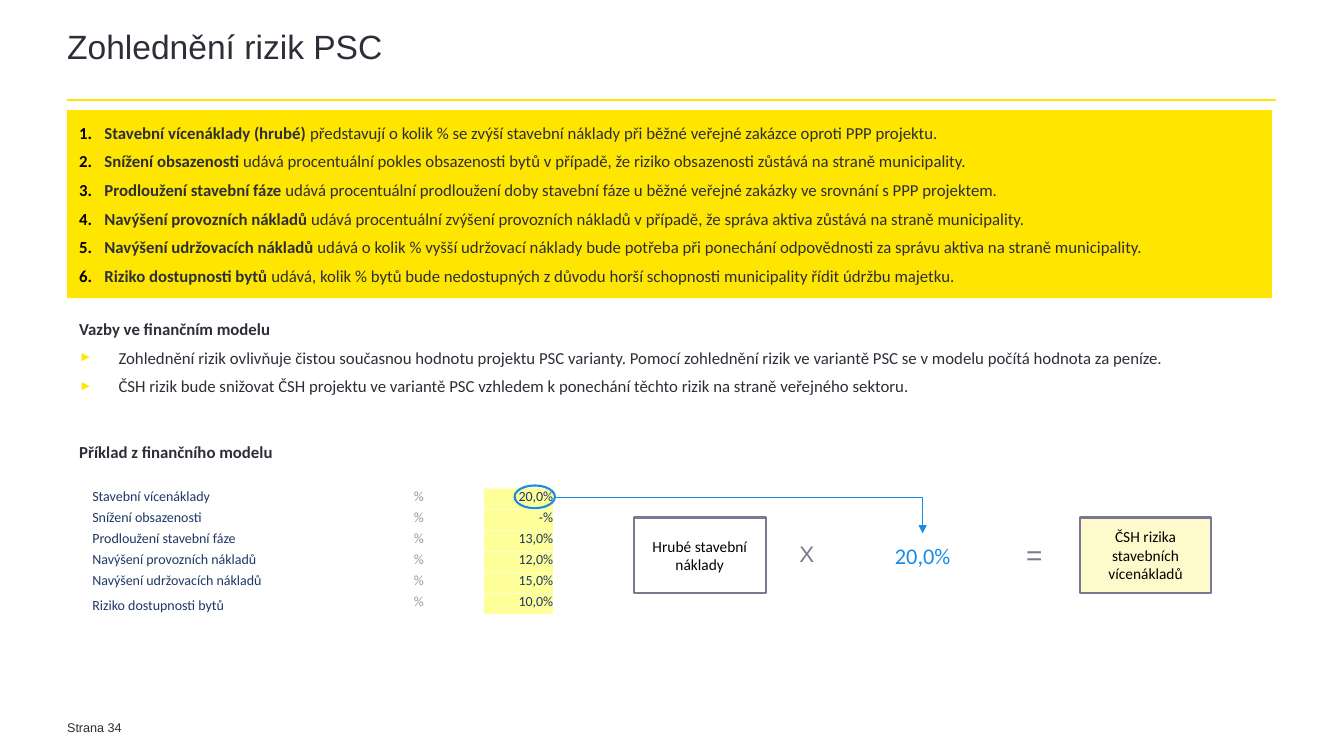
"""Builds the slide on how PSC risks are taken into account."""
from dataclasses import dataclass

from lxml.etree import SubElement
from pptx import Presentation
from pptx.dml.color import RGBColor
from pptx.enum.dml import MSO_LINE
from pptx.enum.shapes import MSO_CONNECTOR, MSO_SHAPE
from pptx.enum.text import MSO_ANCHOR, PP_ALIGN
from pptx.oxml import parse_xml
from pptx.oxml.ns import nsdecls, qn
from pptx.util import Inches, Pt


@dataclass(frozen=True)
class Theme:
    heading_font: str = "Arial"
    body_font: str = "Calibri"
    ink: str = "2E2E38"
    black: str = "000000"
    white: str = "FFFFFF"
    yellow: str = "FFE600"
    cream: str = "FFFACC"
    input_fill: str = "FFFF99"
    gray: str = "797991"
    unit: str = "999999"
    label: str = "1F3864"
    value: str = "203764"
    blue: str = "188CE5"
    title_size: int = 24
    equals_size: int = 20
    formula_size: int = 16
    body_size: int = 12
    box_size: int = 11
    table_size: int = 10
    footer_size: int = 9
    thin: float = 0.75
    thick: float = 1.5


class SlideBuilder:
    """Draws on one slide with a grid of 12 columns and 12 rows to the inch."""

    def __init__(self, deck, theme):
        self.theme = theme
        self.slide = deck.slides.add_slide(deck.slide_layouts[6])

    def place(self, *cells):
        return [Inches(cell / 12) for cell in cells]

    def style(self, para, size, color, font=None, bold=False):
        for span in para.runs:
            span.font.name = font or self.theme.body_font
            span.font.size = Pt(size)
            span.font.bold = bold
            span.font.color.rgb = RGBColor.from_string(color)

    def frame(self, frame, margins, anchor=MSO_ANCHOR.TOP):
        frame.word_wrap = True
        frame.vertical_anchor = anchor
        frame.margin_left, frame.margin_top, frame.margin_right, frame.margin_bottom = self.place(*margins)
        return frame

    def text(self, area, text, size, color, font=None, margins=(0, 0.5, 0, 0),
             align=PP_ALIGN.LEFT, anchor=MSO_ANCHOR.TOP, spacing=None):
        box = self.slide.shapes.add_textbox(*self.place(*area))
        frame = self.frame(box.text_frame, margins, anchor)
        frame.text = text
        para = frame.paragraphs[0]
        para.alignment = align
        para.line_spacing = spacing
        self.style(para, size, color, font)

    def bullet(self, para, indent, color, kind, scale=100, **mark):
        properties = para._p.get_or_add_pPr()
        hanging = Inches(indent)
        properties.set("marL", str(hanging))
        properties.set("indent", str(-hanging))
        SubElement(SubElement(properties, qn("a:buClr")), qn("a:srgbClr"), val=color)
        SubElement(properties, qn("a:buSzPct"), val=str(scale * 1000))
        SubElement(properties, qn("a:buFont"), typeface=self.theme.heading_font if kind == "a:buChar" else self.theme.body_font)
        SubElement(properties, qn(kind), **mark)

    def passage(self, area, entries, fill=None, numbered=False):
        theme = self.theme
        box = self.shape(MSO_SHAPE.RECTANGLE, area, fill)
        anchor = MSO_ANCHOR.MIDDLE if numbered else MSO_ANCHOR.TOP
        frame = self.frame(box.text_frame, (1.44,) * 4, anchor)
        for index, (lead, rest) in enumerate(entries):
            para = frame.paragraphs[0] if index == 0 else frame.add_paragraph()
            para.alignment = PP_ALIGN.JUSTIFY if lead else PP_ALIGN.LEFT
            para.space_after = Pt(6)
            if numbered:
                self.bullet(para, 0.25, theme.black, "a:buAutoNum", type="arabicPeriod")
            elif rest:
                self.bullet(para, 0.39, theme.yellow, "a:buChar", 80, char="►")
            for text in filter(None, (lead, rest)):
                para.add_run().text = text
            self.style(para, theme.body_size, theme.ink)
            if lead:
                para.runs[0].font.bold = True

    def shape(self, kind, area, fill=None, line=None):
        shape = self.slide.shapes.add_shape(kind, *self.place(*area))
        shape.shadow.inherit = False
        if fill:
            shape.fill.solid()
            shape.fill.fore_color.rgb = RGBColor.from_string(fill)
        else:
            shape.fill.background()
        if line:
            shape.line.color.rgb = RGBColor.from_string(line)
            shape.line.width = Pt(self.theme.thick)
        else:
            shape.line.fill.background()
        return shape

    def labelled_box(self, area, text, fill=None):
        box = self.shape(MSO_SHAPE.RECTANGLE, area, fill, self.theme.gray)
        frame = self.frame(box.text_frame, (0.5,) * 4, MSO_ANCHOR.MIDDLE)
        frame.text = text
        frame.paragraphs[0].alignment = PP_ALIGN.CENTER
        self.style(frame.paragraphs[0], self.theme.box_size, self.theme.black)

    def connector(self, ends, color, width, arrow=False):
        kind = MSO_CONNECTOR.ELBOW if arrow else MSO_CONNECTOR.STRAIGHT
        line = self.slide.shapes.add_connector(kind, *self.place(*ends))
        line.line.color.rgb = RGBColor.from_string(color)
        line.line.width = Pt(width)
        properties = line._element.spPr
        if arrow:
            properties.find(qn("a:prstGeom")).set("prst", "bentConnector2")
            SubElement(properties.find(qn("a:ln")), qn("a:tailEnd"), type="triangle")
        SubElement(properties, qn("a:effectLst"))

    def border(self, cell, sides):
        properties = cell._tc.get_or_add_tcPr()
        for index, side in enumerate(sides):
            properties.insert(index, parse_xml(
                f'<a:ln{side} {nsdecls("a")} w="{Pt(0.5)}"><a:solidFill><a:srgbClr val="{self.theme.white}"/>'
                f'</a:solidFill><a:prstDash val="{MSO_LINE.ROUND_DOT.name and "sysDot"}"/></a:ln{side}>'))

    def table(self, corner, widths, height, rows):
        theme = self.theme
        area = (*corner, sum(widths), height * len(rows))
        table = self.slide.shapes.add_table(len(rows), len(widths), *self.place(*area)).table
        table.first_row = table.horz_banding = False
        for column, width in zip(table.columns, self.place(*widths)):
            column.width = width
        for row, texts in zip(table.rows, rows):
            row.height = self.place(height)[0]
            for cell, text, color in zip(row.cells, texts, (theme.label, theme.unit, theme.value)):
                cell.margin_left = cell.margin_right = cell.margin_top = cell.margin_bottom = 0
                cell.text_frame.text = text
                self.style(cell.text_frame.paragraphs[0], theme.table_size, color)
                cell.fill.background()
            unit, value = row.cells[1], row.cells[2]
            value.fill.solid()
            value.fill.fore_color.rgb = RGBColor.from_string(theme.input_fill)
            value.text_frame.paragraphs[0].alignment = PP_ALIGN.RIGHT
            self.border(unit, "R")
            self.border(value, "LRTB")
        table.cell(len(rows) - 1, 0).vertical_anchor = MSO_ANCHOR.BOTTOM


RISKS = [
    ("Stavební vícenáklady (hrubé) ", "představují o kolik % se zvýší stavební náklady při běžné veřejné zakázce oproti PPP projektu."),
    ("Snížení obsazenosti ", "udává procentuální pokles obsazenosti bytů v případě, že riziko obsazenosti zůstává na straně municipality."),
    ("Prodloužení stavební fáze ", "udává procentuální prodloužení doby stavební fáze u běžné veřejné zakázky ve srovnání s PPP projektem."),
    ("Navýšení provozních nákladů ", "udává procentuální zvýšení provozních nákladů v případě, že správa aktiva zůstává na straně municipality."),
    ("Navýšení udržovacích nákladů ", "udává o kolik % vyšší udržovací náklady bude potřeba při ponechání odpovědnosti za správu aktiva na straně municipality."),
    ("Riziko dostupnosti bytů ", "udává, kolik % bytů bude nedostupných z důvodu horší schopnosti municipality řídit údržbu majetku."),
]
LINKS = [
    ("Vazby ve finančním modelu", ""),
    ("", "Zohlednění rizik ovlivňuje čistou současnou hodnotu projektu PSC varianty. Pomocí zohlednění rizik ve variantě PSC se v modelu počítá hodnota za peníze."),
    ("", "ČSH rizik bude snižovat ČSH projektu ve variantě PSC vzhledem k ponechání těchto rizik na straně veřejného sektoru."),
]
RATES = ["20,0%", "-%", "13,0%", "12,0%", "15,0%", "10,0%"]


def main():
    deck = Presentation()
    deck.slide_width, deck.slide_height = Inches(13.34), Inches(7.5)
    theme = Theme()
    page = SlideBuilder(deck, theme)
    center, middle = PP_ALIGN.CENTER, MSO_ANCHOR.MIDDLE
    page.text((8, 85.44, 12, 2), "Strana 34", theme.footer_size, theme.ink, theme.heading_font, spacing=0.85)
    page.connector((8, 11.9, 152, 11.9), theme.yellow, theme.thick)
    page.text((8, 3.84, 144, 7.8), "Zohlednění rizik PSC", theme.title_size, theme.ink,
              theme.heading_font, (0, 0, 0, 0), spacing=0.85)
    page.passage((8, 13.1, 143.5, 22.4), RISKS, theme.yellow, numbered=True)
    page.passage((8, 36.5, 143.5, 14.5), LINKS)
    page.passage((8, 51.2, 143.5, 5.3), [("Příklad z finančního modelu", "")])
    names = [lead.replace("(hrubé)", "").strip() for lead, _ in RISKS]
    page.table((11, 58.1), (38.3, 8.3, 8.3), 2.5, [(name, "%", rate) for name, rate in zip(names, RATES)])
    page.labelled_box((75.5, 61.6, 15.7, 9), "Hrubé stavební náklady")
    page.text((94.3, 63.8, 3.6, 3.7), "X", theme.formula_size, theme.gray, theme.heading_font, align=center)
    page.text((100.8, 61.6, 18.2, 9), RATES[0], theme.formula_size, theme.blue,
              margins=(0.5,) * 4, align=center, anchor=middle)
    page.text((121.4, 63.5, 3.6, 4.6), "=", theme.equals_size, theme.gray, theme.heading_font, align=center)
    page.labelled_box((128.6, 61.6, 15.7, 9), "ČSH rizika stavebních vícenákladů", theme.cream)
    page.connector((66.1, 59.2, 109.9, 63.5), theme.blue, theme.thin, arrow=True)
    page.shape(MSO_SHAPE.OVAL, (61.3, 57.8, 4.8, 2.7), line=theme.blue)
    deck.save("out.pptx")


if __name__ == "__main__":
    main()
